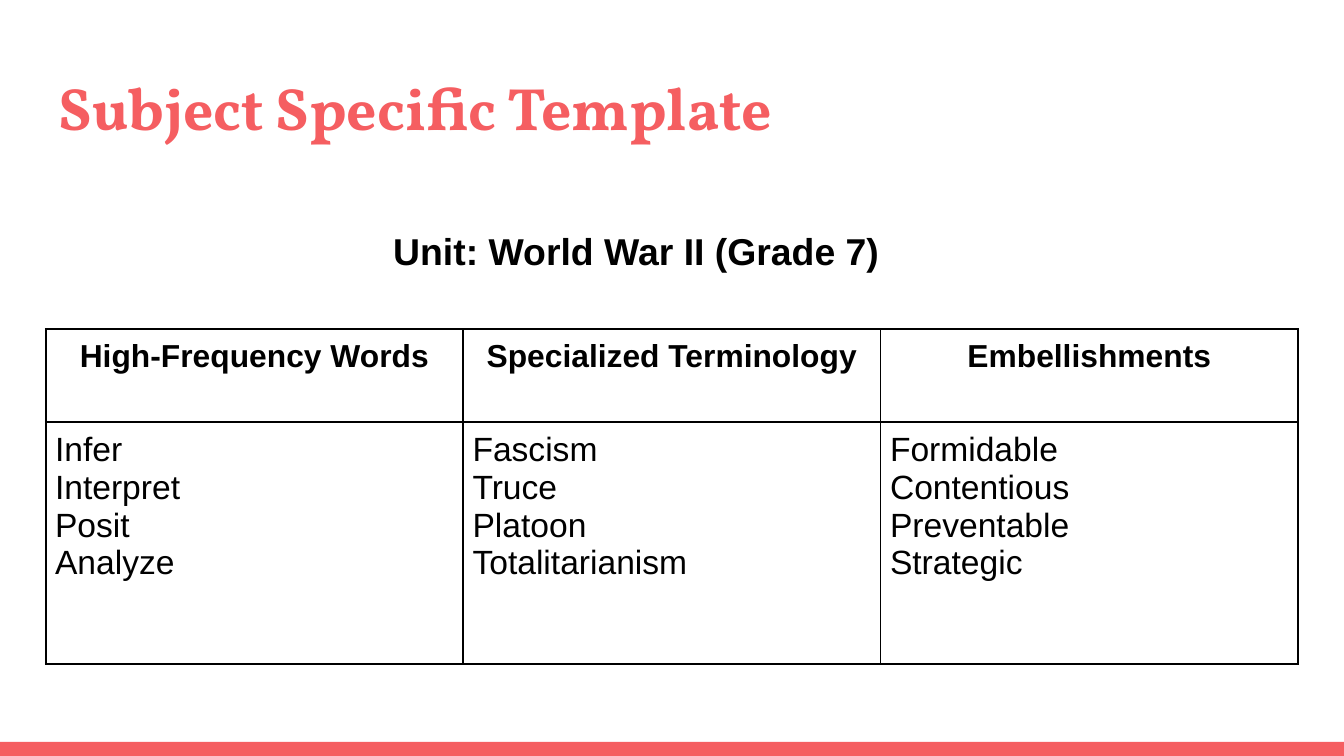
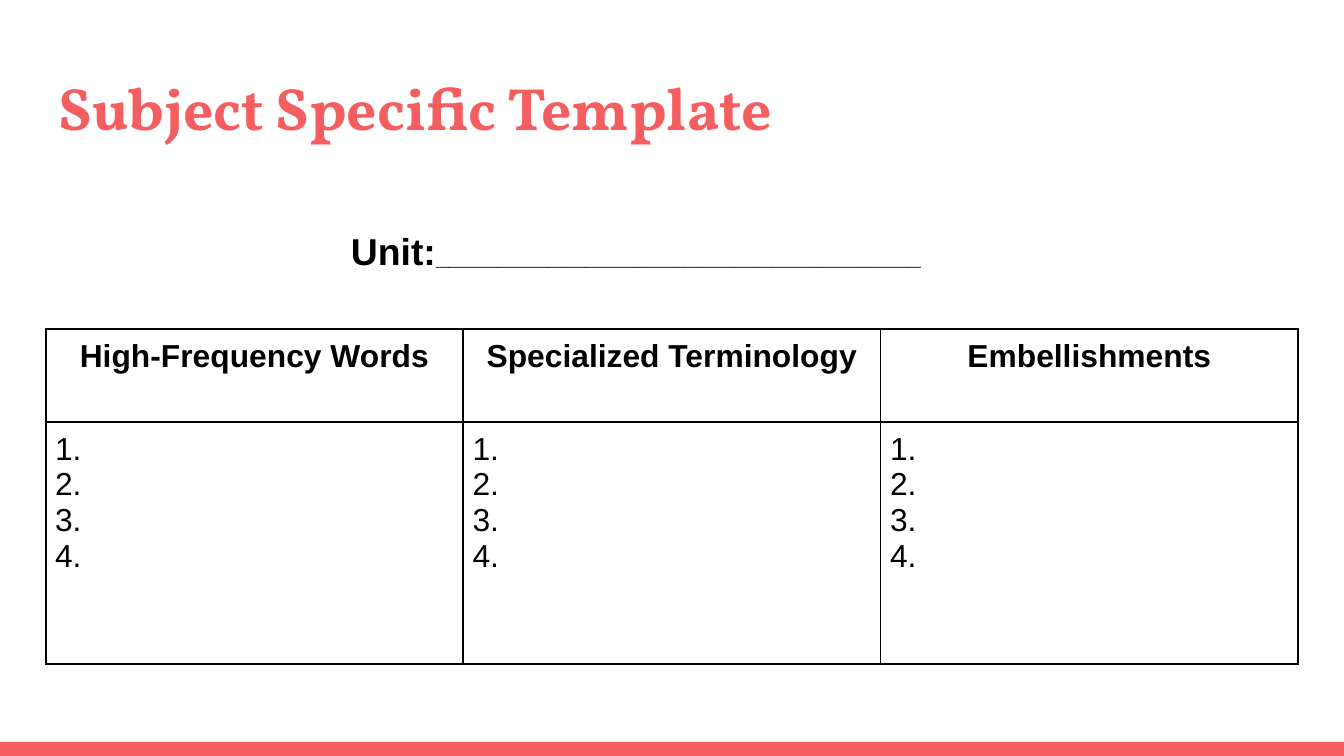
"""Build two vocabulary planning slides: a filled example and a blank template."""
from lxml.etree import SubElement
from pptx import Presentation
from pptx.dml.color import RGBColor
from pptx.enum.shapes import MSO_SHAPE
from pptx.enum.text import MSO_ANCHOR, PP_ALIGN
from pptx.oxml.ns import qn
from pptx.util import Inches, Pt

TITLE = "Subject Specific Template"
HEADINGS = ["High-Frequency Words", "Specialized Terminology", "Embellishments"]
NUMBERS = ["1.", "2.", "3.", "4."]
SLIDES = [
    {
        "unit": [("Unit: World War II (Grade 7)", 20)],
        "words": [
            ["Infer", "Interpret", "Posit", "Analyze"],
            ["Fascism", "Truce", "Platoon", "Totalitarianism"],
            ["Formidable", "Contentious", "Preventable", "Strategic"],
        ],
        "word_size": 18,
    },
    {
        "unit": [("Unit:", 20), ("_______________________________________", 12)],
        "words": [NUMBERS] * len(HEADINGS),
        "word_size": 17,
    },
]

CORAL = RGBColor(0xF5, 0x5E, 0x61)
BLACK = RGBColor(0x00, 0x00, 0x00)
WIDTH = 10
HEIGHT = WIDTH * 9 / 16
BAND_TOP = 5.52
TITLE_BOX = (0.34, 0.43, 9.32, 0.68)
UNIT_BOX = (2.48, 0.2, 4.51, 3.28)
TABLE_LEFT, TABLE_TOP, TABLE_WIDTH = 0.34, 2.45, 9.32
COLUMN_WIDTH = TABLE_WIDTH / len(HEADINGS)
ROW_HEIGHTS = (0.69, 1.8)
HEADING_SIZE = 17
CELL_MARGIN, BOX_MARGIN = 0.07, 0.1
SIDES = ("left", "top", "right", "bottom")


def set_margins(target, inches):
    for side in SIDES:
        setattr(target, f"margin_{side}", Inches(inches))


def add_run(paragraph, text, size, bold=True, name="Arial", color=BLACK):
    run = paragraph.add_run()
    run.text = text
    for key, value in {"size": Pt(size), "bold": bold, "name": name}.items():
        setattr(run.font, key, value)
    run.font.color.rgb = color


def add_text_frame(slide, box, anchor):
    frame = slide.shapes.add_textbox(*map(Inches, box)).text_frame
    frame.word_wrap = True
    frame.vertical_anchor = anchor
    set_margins(frame, BOX_MARGIN)
    return frame


def add_band(slide):
    band = slide.shapes.add_shape(
        MSO_SHAPE.RECTANGLE, 0, Inches(BAND_TOP), Inches(WIDTH), Inches(HEIGHT - BAND_TOP)
    )
    band.shadow.inherit = False
    band.fill.solid()
    band.fill.fore_color.rgb = CORAL
    band.line.fill.background()


def add_title(slide):
    frame = add_text_frame(slide, TITLE_BOX, MSO_ANCHOR.TOP)
    add_run(frame.paragraphs[0], TITLE, 32, name="Vollkorn", color=CORAL)


def add_unit(slide, unit):
    paragraph = add_text_frame(slide, UNIT_BOX, MSO_ANCHOR.MIDDLE).paragraphs[0]
    paragraph.alignment = PP_ALIGN.CENTER
    paragraph.line_spacing = 1.15
    for text, size in unit:
        add_run(paragraph, text, size)


def add_borders(cell):
    properties = cell._tc.get_or_add_tcPr()
    for tag in ("a:lnL", "a:lnR", "a:lnT", "a:lnB"):
        border = SubElement(properties, qn(tag), w=str(Pt(1)))
        fill = SubElement(border, qn("a:solidFill"))
        SubElement(fill, qn("a:srgbClr"), val=str(BLACK))


def fill_cell(cell, lines, size, bold, alignment):
    set_margins(cell, CELL_MARGIN)
    add_borders(cell)
    cell.fill.background()
    frame = cell.text_frame
    for index, line in enumerate(lines):
        paragraph = frame.add_paragraph() if index else frame.paragraphs[0]
        paragraph.alignment = alignment
        add_run(paragraph, line, size, bold)


def add_word_table(slide, words, word_size):
    table = slide.shapes.add_table(
        len(ROW_HEIGHTS), len(HEADINGS), Inches(TABLE_LEFT), Inches(TABLE_TOP),
        Inches(TABLE_WIDTH), Inches(sum(ROW_HEIGHTS)),
    ).table
    table.first_row = table.horz_banding = False
    for row, height in zip(table.rows, ROW_HEIGHTS):
        row.height = Inches(height)
    for column, (heading, word_list) in enumerate(zip(HEADINGS, words)):
        table.columns[column].width = Inches(COLUMN_WIDTH)
        fill_cell(table.cell(0, column), [heading], HEADING_SIZE, True, PP_ALIGN.CENTER)
        fill_cell(table.cell(1, column), word_list, word_size, False, PP_ALIGN.LEFT)


def main():
    deck = Presentation()
    deck.slide_width, deck.slide_height = Inches(WIDTH), Inches(HEIGHT)
    for content in SLIDES:
        slide = deck.slides.add_slide(deck.slide_layouts[6])
        add_band(slide)
        add_title(slide)
        add_word_table(slide, content["words"], content["word_size"])
        add_unit(slide, content["unit"])
    deck.save("out.pptx")


if __name__ == "__main__":
    main()
